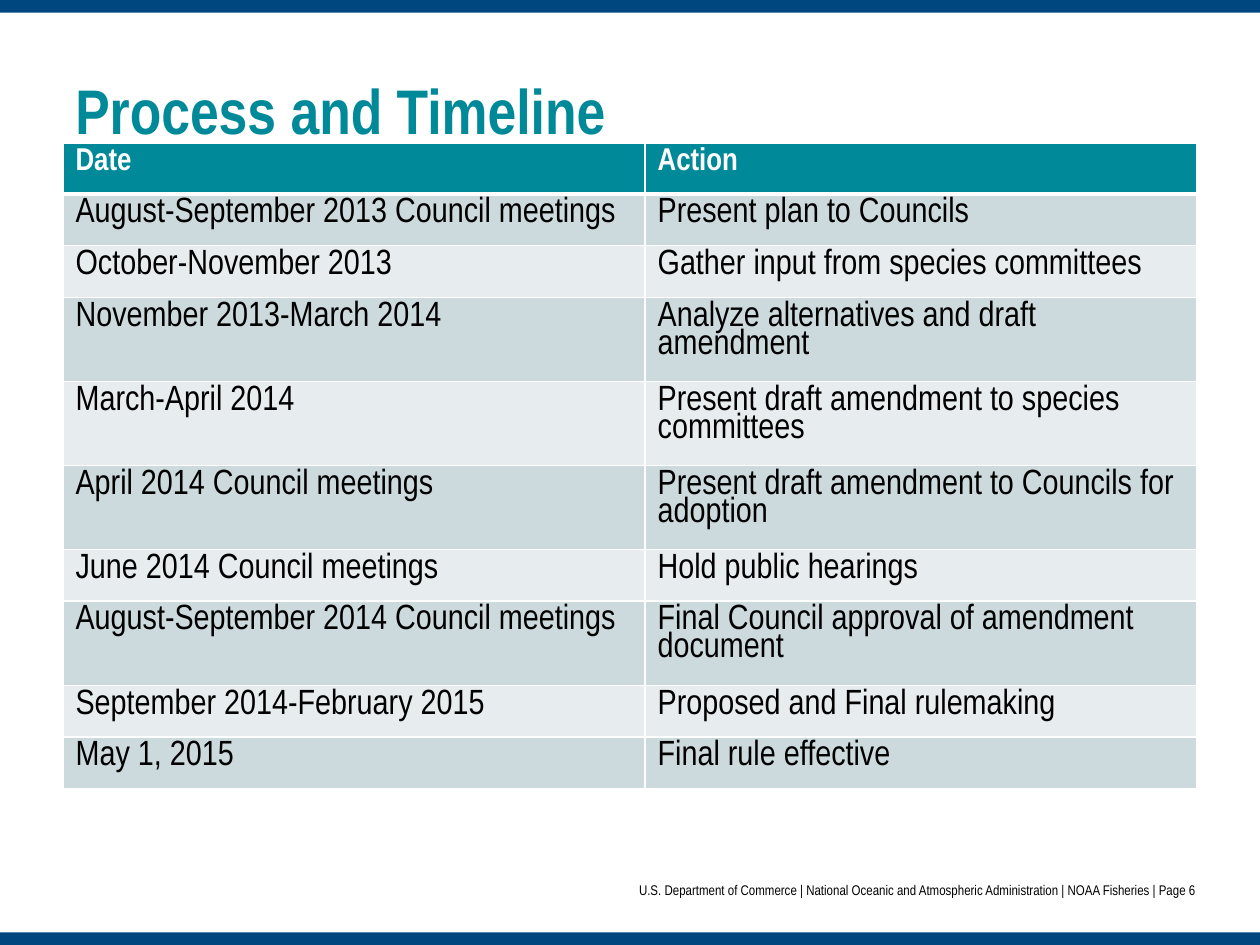
from lxml import etree
from pptx import Presentation
from pptx.dml.color import RGBColor
from pptx.enum import shapes, text
from pptx.oxml.ns import qn
from pptx.util import Inches, Pt

FONT = "Arial Narrow"
NAVY = RGBColor(0x00, 0x46, 0x7F)
TEAL = RGBColor(0x00, 0x89, 0x98)
DARK_BAND = RGBColor(0xCC, 0xDA, 0xDD)
LIGHT_BAND = RGBColor(0xE7, 0xED, 0xEF)
WHITE = RGBColor(0xFF, 0xFF, 0xFF)
BLACK = RGBColor(0x00, 0x00, 0x00)

COLUMN_WIDTHS = (4.62, 4.38)
HEADER_HEIGHT, ROW_HEIGHT = 0.4, 0.41
TIMELINE = [
    ("Date", "Action"),
    ("August-September 2013 Council meetings", "Present plan to Councils"),
    ("October-November 2013", "Gather input from species committees"),
    ("November 2013-March 2014", "Analyze alternatives and draft amendment"),
    ("March-April 2014", "Present draft amendment to species committees"),
    ("April 2014 Council meetings", "Present draft amendment to Councils for adoption"),
    ("June 2014 Council meetings", "Hold public hearings"),
    ("August-September 2014 Council meetings", "Final Council approval of amendment document"),
    ("September 2014-February 2015", "Proposed and Final rulemaking"),
    ("May 1, 2015", "Final rule effective"),
]
FOOTER = "U.S. Department of Commerce | National Oceanic and Atmospheric Administration | NOAA Fisheries | Page 6"


def write_text(frame, content, size, color=BLACK, bold=False,
               align=text.PP_ALIGN.LEFT, spacing=1.0):
    paragraph = frame.paragraphs[0]
    paragraph.alignment = align
    paragraph.line_spacing = spacing
    run = paragraph.add_run()
    run.text = content
    run.font.name = FONT
    run.font.size = Pt(size)
    run.font.bold = bold
    run.font.color.rgb = color


def add_bar(slide, top):
    bar = slide.shapes.add_shape(shapes.MSO_SHAPE.RECTANGLE, 0, Inches(top),
                                 Inches(10), Inches(0.1))
    bar.shadow.inherit = False
    bar.fill.solid()
    bar.fill.fore_color.rgb = NAVY
    bar.line.fill.background()


def add_text_box(slide, content, top, height, side_inset, **text_format):
    box = slide.shapes.add_textbox(Inches(0.5), Inches(top), Inches(9), Inches(height))
    frame = box.text_frame
    frame.word_wrap = True
    frame.vertical_anchor = text.MSO_ANCHOR.MIDDLE
    frame.margin_left = frame.margin_right = Inches(side_inset)
    write_text(frame, content, **text_format)


def set_borders(cell, top, bottom):
    """Draw white cell borders; the fill must be set afterwards."""
    properties = cell._tc.get_or_add_tcPr()
    for tag, width in (("lnL", 1), ("lnR", 1), ("lnT", top), ("lnB", bottom)):
        line = etree.SubElement(properties, qn(f"a:{tag}"), w=str(Pt(width)))
        fill = etree.SubElement(line, qn("a:solidFill"))
        etree.SubElement(fill, qn("a:srgbClr"), val=str(WHITE))


def add_timeline(slide):
    frame = slide.shapes.add_table(
        len(TIMELINE), len(COLUMN_WIDTHS), Inches(0.5), Inches(1.14),
        Inches(sum(COLUMN_WIDTHS)), Inches(ROW_HEIGHT * len(TIMELINE)))
    table = frame.table
    for column, width in zip(table.columns, COLUMN_WIDTHS):
        column.width = Inches(width)
    for row, entries in enumerate(TIMELINE):
        header = row == 0
        table.rows[row].height = Inches(HEADER_HEIGHT if header else ROW_HEIGHT)
        band = TEAL if header else DARK_BAND if row % 2 else LIGHT_BAND
        for column, content in enumerate(entries):
            cell = table.cell(row, column)
            set_borders(cell, top=3 if row == 1 else 1, bottom=3 if header else 1)
            cell.fill.solid()
            cell.fill.fore_color.rgb = band
            write_text(cell.text_frame, content, size=18 if header else 20,
                       color=WHITE if header else BLACK, bold=header, spacing=0.85)


def main():
    presentation = Presentation()
    presentation.slide_width, presentation.slide_height = Inches(10), Inches(7.5)
    slide = presentation.slides.add_slide(presentation.slide_layouts[6])

    # Bars along the top and bottom edges
    for top in (0, 7.4):
        add_bar(slide, top)

    # Title, timeline table and footer
    add_text_box(slide, "Process and Timeline", 0.5, 0.74, 0.1,
                 size=36, color=TEAL, bold=True)
    add_timeline(slide)
    add_text_box(slide, FOOTER, 6.86, 0.4, 0, size=8, align=text.PP_ALIGN.RIGHT)

    presentation.save("out.pptx")


if __name__ == "__main__":
    main()
